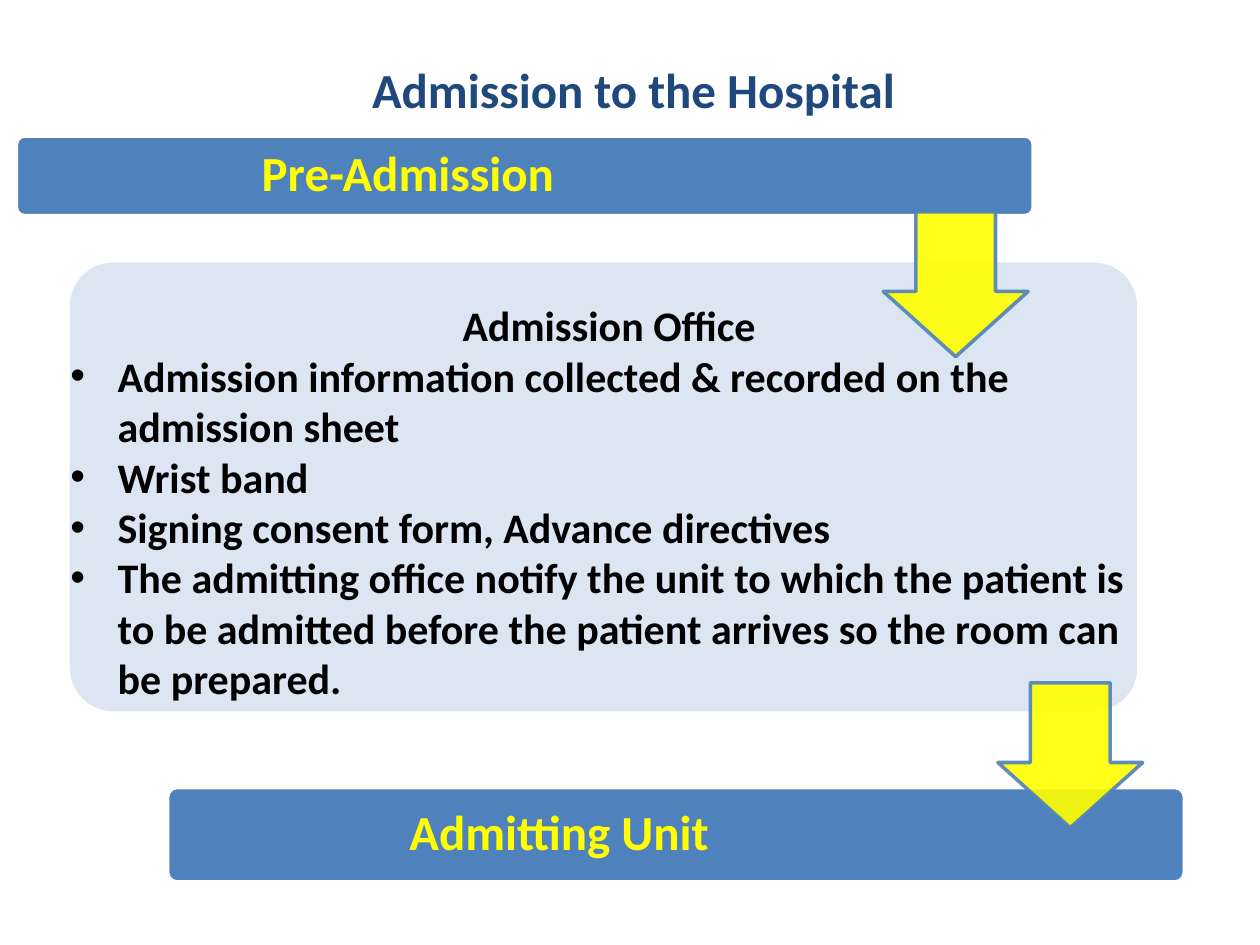
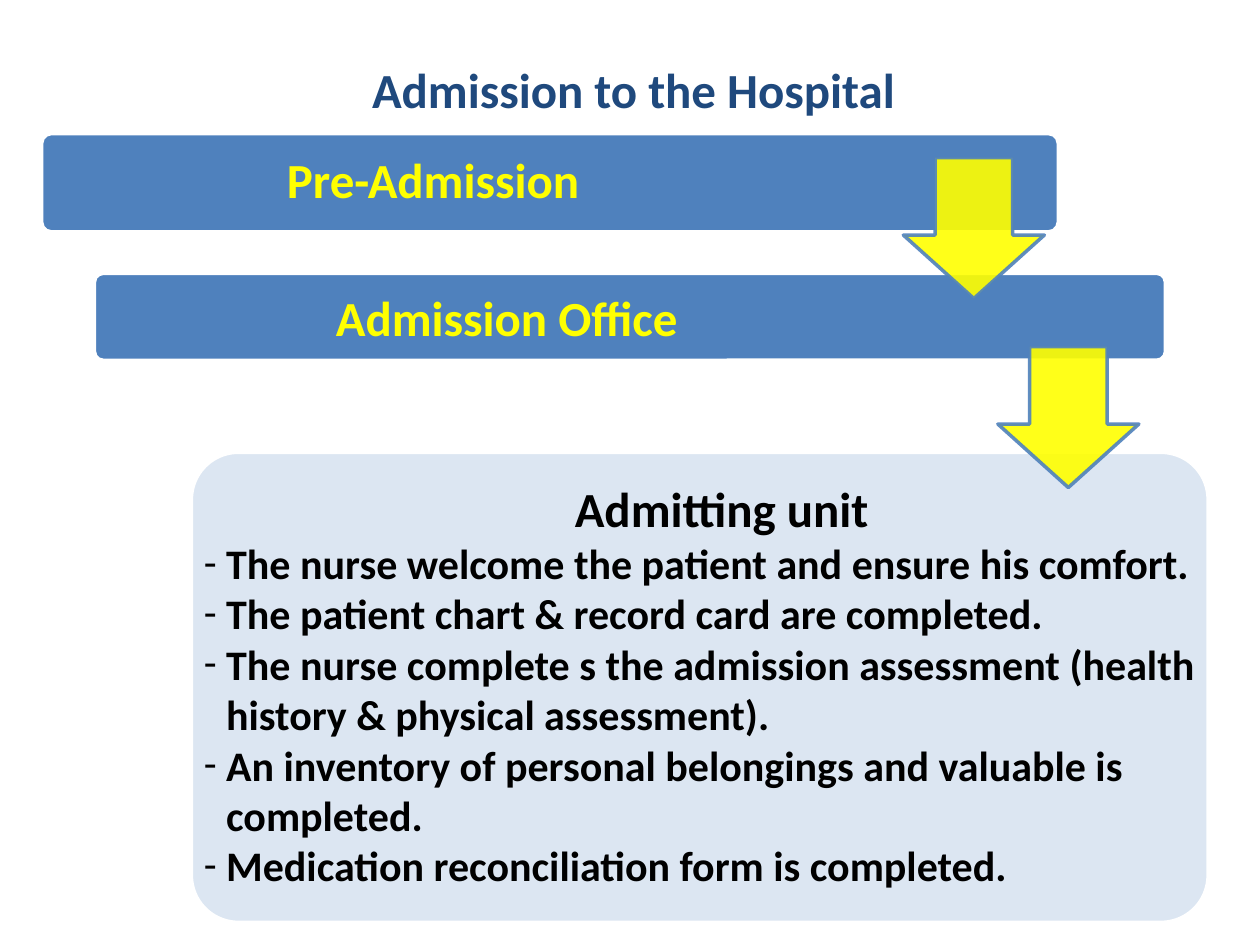
import pptx
import pptx.util
import pptx.dml.color
import pptx.enum.shapes
import pptx.enum.text
from dataclasses import dataclass
from lxml import etree

Pt = pptx.util.Pt
SHAPES = pptx.enum.shapes.MSO_SHAPE
ALIGN = pptx.enum.text.PP_ALIGN
MIDDLE = pptx.enum.text.MSO_ANCHOR.MIDDLE
TITLE_ONLY = 5


@dataclass(frozen=True)
class Theme:
    font: str = "Calibri"
    title: str = "1F497D"
    blue: str = "4F81BD"
    panel: str = "DCE6F2"
    yellow: str = "FFFF00"
    white: str = "FFFFFF"
    black: str = "000000"
    large: int = 28
    body: int = 24
    line: int = 2
    corner: float = 0.1
    arrow_opacity: int = 90
    label_share: float = 0.77  # part of a bar in which its label is centred


THEME = Theme()
TITLE = "Admission to the Hospital"
TITLE_BOX = (38, 6, 648, 90)

SLIDES = [
    {
        "bars": [
            ("Pre-Admission", (9.4, 77.8, 581, 45.4), 0.9),
            ("Admitting Unit", (95.8, 450, 581, 54), 0.9),
        ],
        "panel": {
            "box": (38.9, 149, 612, 258.5),
            "text_box": (-5.8, 18.8, 630, 239.8),
            "heading": "Admission Office",
            "heading_size": THEME.body,
            "bullet": "•",
            "bullet_font": "Arial",
            "hang": 27,
            "items": [
                "Admission information collected & recorded on the admission sheet",
                "Wrist band",
                "Signing consent form, Advance directives",
                "The admitting office notify the unit to which the patient is "
                "to be admitted before the patient arrives so the room can be prepared.",
            ],
        },
        "arrow_size": 82.8,
        "arrows": [(504.7, 121), (570.2, 390.2)],
    },
    {
        "bars": [
            ("Pre-Admission", (23.8, 76.3, 581, 56.2), 0.9),
            ("Admission Office", (54, 156.2, 612, 49.7), 1.0),
        ],
        "panel": {
            "box": (109.4, 258.5, 581, 268.6),
            "text_box": (0, 11.5, 606, 245),
            "heading": "Admitting unit",
            "heading_size": THEME.large,
            "bullet": "-",
            "bullet_font": THEME.font,
            "hang": 12.75,
            "items": [
                "The nurse welcome the patient and ensure his comfort.",
                "The patient chart & record card are completed.",
                "The nurse complete s the admission assessment "
                "(health history & physical assessment).",
                "An inventory of personal belongings and valuable is completed.",
                "Medication reconciliation form is completed.",
            ],
        },
        "arrow_size": 80.6,
        "arrows": [(516.2, 90), (570.2, 198)],
    },
]


def apply_format(target, values):
    for name, value in values.items():
        setattr(target, name, value)


def rgb(color):
    return pptx.dml.color.RGBColor.from_string(color)


def points(box):
    return [Pt(value) for value in box]


def write(paragraph, text, size, color, alignment):
    run = paragraph.add_run()
    run.text = text
    paragraph.alignment = alignment
    apply_format(run.font, {"name": THEME.font, "size": Pt(size), "bold": True})
    run.font.color.rgb = rgb(color)


def add_bullet(paragraph, character, font, hang):
    properties = paragraph._p.get_or_add_pPr()
    properties.set("marL", str(Pt(hang)))
    properties.set("indent", str(-Pt(hang)))
    for tag, attribute, value in (("a:buFont", "typeface", font),
                                  ("a:buChar", "char", character)):
        etree.SubElement(properties, pptx.oxml.ns.qn(tag)).set(attribute, value)


def set_opacity(fill_parent, percent):
    """Make the solid colour directly under the given element translucent."""
    color = fill_parent.find(
        pptx.oxml.ns.qn("a:solidFill") + "/" + pptx.oxml.ns.qn("a:srgbClr"))
    alpha = etree.SubElement(color, pptx.oxml.ns.qn("a:alpha"))
    alpha.set("val", str(percent * 1000))


def add_filled_shape(slide, kind, box, adjustments, fill, line):
    shape = slide.shapes.add_shape(kind, *points(box))
    for index, value in enumerate(adjustments):
        shape.adjustments[index] = value
    shape.shadow.inherit = False
    shape.fill.solid()
    shape.fill.fore_color.rgb = rgb(fill)
    shape.line.color.rgb = rgb(line)
    shape.line.width = Pt(THEME.line)
    return shape


def add_rounded_box(slide, box, fill):
    return add_filled_shape(
        slide, SHAPES.ROUNDED_RECTANGLE, box, [THEME.corner], fill, THEME.white)


def add_title(slide):
    title = slide.shapes.title
    left, top, width, height = points(TITLE_BOX)
    apply_format(title, {"left": left, "top": top, "width": width, "height": height})
    title.text_frame.vertical_anchor = MIDDLE
    write(title.text_frame.paragraphs[0], TITLE, THEME.large, THEME.title, ALIGN.CENTER)


def add_bar(slide, label, box, line_spacing):
    frame = add_rounded_box(slide, box, THEME.blue).text_frame
    apply_format(frame, {
        "margin_left": 0, "margin_top": 0, "margin_bottom": 0,
        "margin_right": Pt(box[2] * (1 - THEME.label_share)),
        "vertical_anchor": MIDDLE, "word_wrap": True,
    })
    paragraph = frame.paragraphs[0]
    write(paragraph, label, THEME.large, THEME.yellow, ALIGN.CENTER)
    paragraph.line_spacing = line_spacing


def add_panel(slide, box, text_box, heading, heading_size,
              bullet, bullet_font, hang, items):
    """Draw the light panel of the current step; text_box is relative to box."""
    add_rounded_box(slide, box, THEME.panel)
    left, top, width, height = text_box
    frame = slide.shapes.add_textbox(
        *points((box[0] + left, box[1] + top, width, height))).text_frame
    frame.word_wrap = True
    write(frame.paragraphs[0], heading, heading_size, THEME.black, ALIGN.CENTER)
    for item in items:
        paragraph = frame.add_paragraph()
        write(paragraph, item, THEME.body, THEME.black, ALIGN.LEFT)
        add_bullet(paragraph, bullet, bullet_font, hang)


def add_step_arrow(slide, left, top, size):
    arrow = add_filled_shape(slide, SHAPES.DOWN_ARROW, (left, top, size, size),
                             [0.55, 0.45], THEME.yellow, THEME.blue)
    properties = arrow._element.spPr
    for parent in (properties, properties.find(pptx.oxml.ns.qn("a:ln"))):
        set_opacity(parent, THEME.arrow_opacity)


def add_admission_slide(presentation, content):
    slide = presentation.slides.add_slide(presentation.slide_layouts[TITLE_ONLY])
    add_title(slide)
    for label, box, line_spacing in content["bars"]:
        add_bar(slide, label, box, line_spacing)
    add_panel(slide, **content["panel"])
    for left, top in content["arrows"]:
        add_step_arrow(slide, left, top, content["arrow_size"])


def main():
    presentation = pptx.Presentation()
    apply_format(presentation, {"slide_width": Pt(720), "slide_height": Pt(540)})
    for content in SLIDES:
        add_admission_slide(presentation, content)
    presentation.save("out.pptx")


if __name__ == "__main__":
    main()
